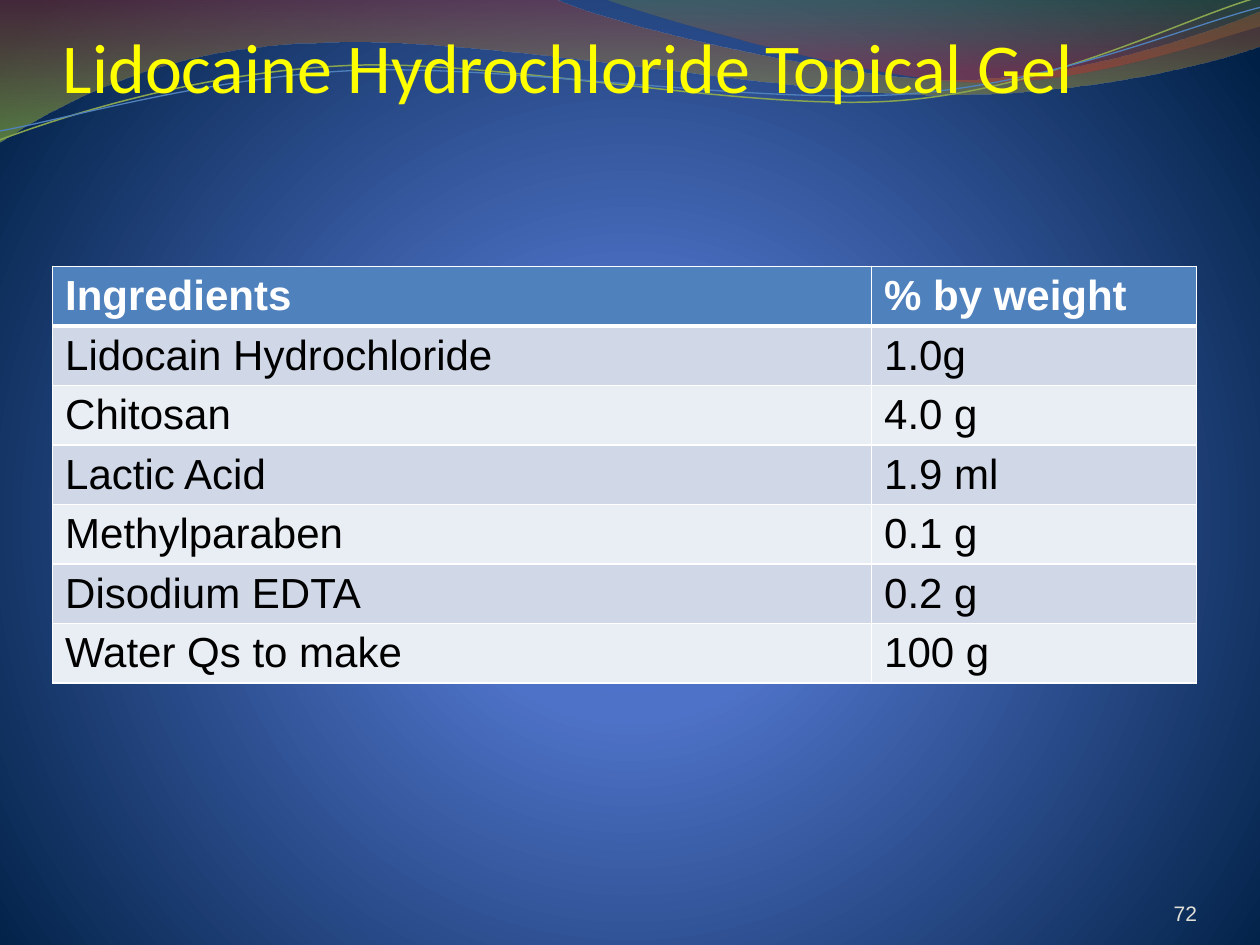
from lxml import etree
from pptx import Presentation
from pptx.dml.color import RGBColor
from pptx.enum import text
from pptx.oxml import parse_xml
from pptx.oxml.ns import qn
from pptx.util import Cm, Pt

NS = 'xmlns:a="http://schemas.openxmlformats.org/drawingml/2006/main"'
WHITE = RGBColor(0xFF, 0xFF, 0xFF)
BLACK = RGBColor(0, 0, 0)
YELLOW = RGBColor(0xFF, 0xFF, 0)
CREAM = RGBColor(0xE3, 0xE1, 0xD7)
BLUE = RGBColor(0x4F, 0x81, 0xBD)
MIST = RGBColor(0xD0, 0xD8, 0xE8)
PALE = RGBColor(0xE9, 0xED, 0xF4)
GREEN = RGBColor(0x89, 0xA5, 0x4F)
RUST = RGBColor(0x97, 0x33, 0x30)
LIME = RGBColor(0x95, 0xC2, 0x38)
OLIVE = RGBColor(0x76, 0x95, 0x37)
RED = RGBColor(0xBE, 0x33, 0x30)
SKY = RGBColor(0x4D, 0x75, 0xD6)
ROYAL = RGBColor(0x4E, 0x72, 0xC7)
NAVY = RGBColor(0, 0x1F, 0x44)


def blend(props, stops, tail):
    marks = "".join(
        f'<a:gs pos="{pos * 1000}"><a:srgbClr val="{tone}">'
        f'<a:alpha val="{alpha * 1000}"/></a:srgbClr></a:gs>'
        for pos, tone, alpha in stops)
    grad = parse_xml(f'<a:gradFill {NS} rotWithShape="1"><a:gsLst>{marks}</a:gsLst>{tail}</a:gradFill>')
    props.replace(props.find(qn("a:solidFill")), grad)


def trace(start, parts, close):
    dots = [part[i:i + 2] for part in parts for i in range(0, len(part), 2)]
    form = slide.shapes.build_freeform(*start, scale=Cm(0.01))
    form.add_line_segments(dots, close=close)
    shape = form.convert_to_shape()
    shape.shadow.inherit = False
    steps = iter(list(shape._element.iter(qn("a:lnTo"))))
    for part in parts:
        step = next(steps)
        if len(part) == 6:
            step.addprevious(parse_xml(f'<a:cubicBezTo {NS}/>'))
            curve = step.getprevious()
            for old in (step, next(steps), next(steps)):
                curve.append(old[0])
                old.getparent().remove(old)
    return shape


deck = Presentation()
deck.slide_width, deck.slide_height = Cm(25.4), Cm(19.05)
slide = deck.slides.add_slide(deck.slide_layouts[6])

slide.background.fill.solid()
blend(slide.background._cSld.bg.bgPr, [(0, SKY, 100), (25, ROYAL, 100), (100, NAVY, 100)],
      '<a:path path="circle"><a:fillToRect l="10000" t="110000" r="10000" b="100000"/></a:path>')

waves = [
    ((0, -3), [(1118, -3), (1209, 43, 1687, 160, 1925, 160),
               (2167, 160, 2433, 66, 2540, 23), (2543, 91),
               (2497, 112, 2210, 193, 1895, 191),
               (1580, 191, 970, 71, 653, 86), (328, 89, 117, 211, -3, 287)],
     [(0, RUST, 45), (100, LIME, 55)]),
    ((1217, -3), [(1293, 28, 1732, 157, 1953, 165),
                  (2174, 175, 2441, 81, 2540, 53), (2540, 0)],
     [(0, OLIVE, 30), (80, RED, 45)]),
]
for start, parts, stops in waves:
    wave = trace(start, parts, True)
    wave.line.fill.background()
    wave.fill.solid()
    blend(wave._element.spPr, stops, '<a:lin ang="5400000" scaled="0"/>')

lines = [
    ((0, 282), [(122, 236, 401, 145, 704, 132), (1003, 119, 1506, 226, 1811, 203),
                (2116, 180, 2383, 38, 2535, -5)], GREEN, 0.85),
    ((0, 264), [(119, 244, 417, 155, 719, 142), (1024, 130, 1516, 211, 1821, 190),
                (2123, 170, 2390, 53, 2540, 15)], BLUE, 0.75),
]
for start, parts, tone, width in lines:
    line = trace(start, parts, False)
    line.fill.background()
    line.line.color.rgb = tone
    line.line.width = Pt(width)

labels = [
    ("Lidocaine Hydrochloride Topical Gel", (1.27, 0.2, 22.86, 1.96), 40, "Calibri", YELLOW, text.PP_ALIGN.LEFT),
    ("72", (22.02, 17.65, 2.11, 1.02), 12, "Arial", CREAM, text.PP_ALIGN.RIGHT),
]
for words, place, size, face, tone, side in labels:
    frame = slide.shapes.add_textbox(*map(Cm, place)).text_frame
    frame.word_wrap = True
    frame.vertical_anchor = text.MSO_ANCHOR.BOTTOM
    frame.margin_left = frame.margin_right = frame.margin_top = frame.margin_bottom = 0
    para = frame.paragraphs[0]
    para.alignment = side
    run = para.add_run()
    run.text = words
    run.font.size, run.font.name = Pt(size), face
    run.font.color.rgb = tone

rows = [
    ("Ingredients", "% by weight"),
    ("Lidocain Hydrochloride", "1.0g"),
    ("Chitosan", "4.0 g"),
    ("Lactic Acid", "1.9 ml"),
    ("Methylparaben", "0.1 g"),
    ("Disodium EDTA", "0.2 g"),
    ("Water Qs to make ", "100 g"),
]
table = slide.shapes.add_table(len(rows), 2, Cm(1.06), Cm(5.37), Cm(23.06), Cm(8.4)).table
table.columns[0].width, table.columns[1].width = Cm(16.51), Cm(6.55)
for i, row in enumerate(rows):
    table.rows[i].height = Cm(1.2)
    for j, words in enumerate(row):
        cell = table.cell(i, j)
        cell.margin_bottom = 0
        cell.fill.solid()
        cell.fill.fore_color.rgb = BLUE if i == 0 else (PALE, MIST)[i % 2]
        run = cell.text_frame.paragraphs[0].add_run()
        run.text = words
        run.font.size, run.font.name = Pt(24), "Arial"
        run.font.bold = i == 0
        run.font.color.rgb = BLACK if i else WHITE
        props = cell._tc.get_or_add_tcPr()
        for k, side in enumerate("LRTB"):
            thick = 3 if (i, side) in ((0, "B"), (1, "T")) else 1
            edge = etree.fromstring(
                f'<a:ln{side} {NS} w="{Pt(thick)}"><a:solidFill>'
                f'<a:srgbClr val="{WHITE}"/></a:solidFill></a:ln{side}>')
            props.insert(k, edge)

deck.save("out.pptx")
